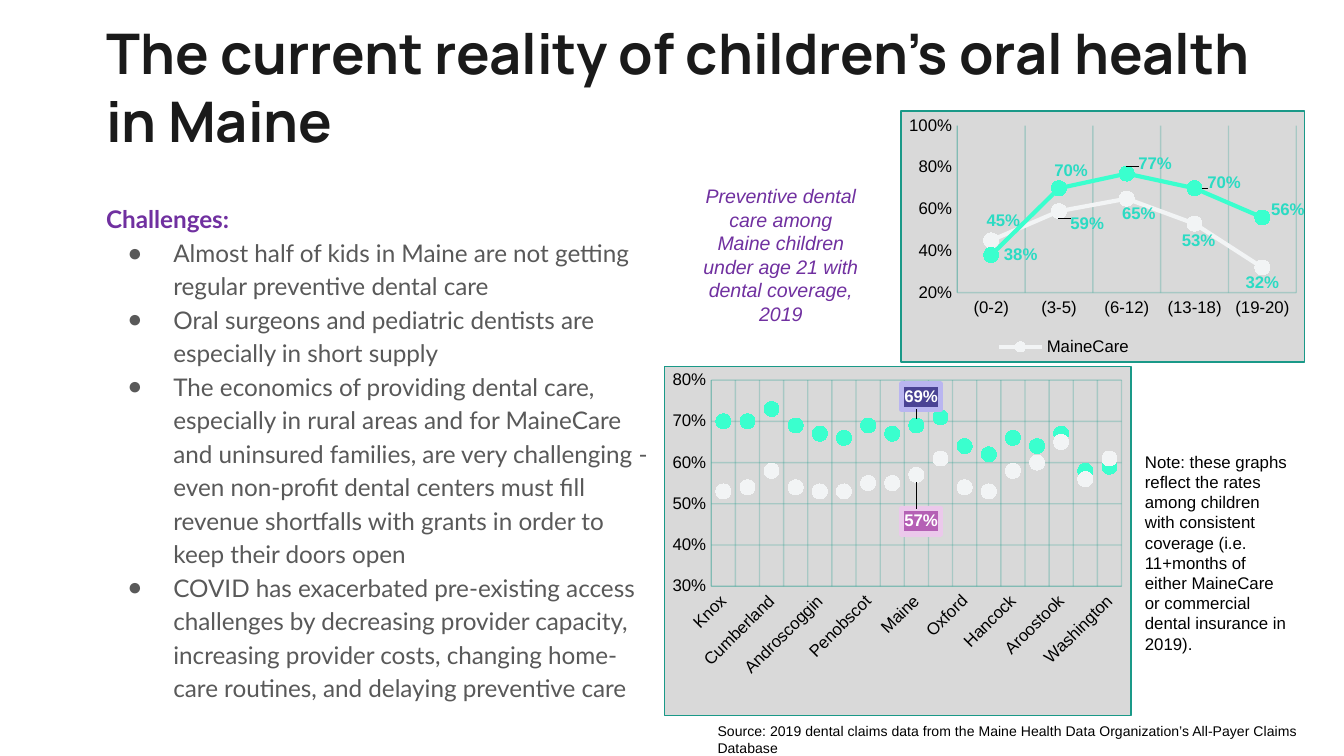
from lxml.etree import SubElement
from pptx import Presentation
from pptx.chart.data import CategoryChartData
from pptx.dml.color import RGBColor
from pptx.enum.chart import (XL_CHART_TYPE, XL_LABEL_POSITION, XL_LEGEND_POSITION,
                             XL_MARKER_STYLE, XL_TICK_MARK)
from pptx.enum.text import MSO_ANCHOR, MSO_AUTO_SIZE, PP_ALIGN
from pptx.oxml import parse_xml
from pptx.oxml.ns import nsdecls, qn
from pptx.util import Inches, Pt

COLORS = {
    "title": "1A1A1A", "purple": "7030A0", "body": "595959", "black": "000000",
    "teal": "1A9988", "panel": "D9D9D9", "label": "2BDBC3", "white": "FFFFFF",
    "MaineCare": "F2F4F5", "Commercial Dental": "3AFFCE",
    "indigo": "4A4394", "lavender": "B9B5F0", "orchid": "B560B5", "pink": "EBC8EB",
}
CELL = 0.1  # grid cell in inches

CHALLENGES = [
    "Almost half of kids in Maine are not getting regular preventive dental care",
    "Oral surgeons and pediatric dentists are especially in short supply",
    "The economics of providing dental care, especially in rural areas and for MaineCare "
    "and uninsured families, are very challenging - even non-profit dental centers must fill "
    "revenue shortfalls with grants in order to keep their doors open",
    "COVID has exacerbated pre-existing access challenges by decreasing provider capacity, "
    "increasing provider costs, changing home-care routines, and delaying preventive care",
]
AGES = ["(0-2)", "(3-5)", "(6-12)", "(13-18)", "(19-20)"]
AGE_RATES = {
    "MaineCare": [0.45, 0.59, 0.65, 0.53, 0.32],
    "Commercial Dental": [0.38, 0.70, 0.77, 0.70, 0.56],
}
ABOVE, BELOW, RIGHT = XL_LABEL_POSITION.ABOVE, XL_LABEL_POSITION.BELOW, XL_LABEL_POSITION.RIGHT
# Position and shift, as shares of the chart's width and height
AGE_LABELS = {
    "MaineCare": [(ABOVE, 0.03, 0.01), (BELOW, 0.07, -0.04), (BELOW, 0.03, -0.03),
                  (BELOW, 0.01, -0.02), (BELOW, 0, -0.03)],
    "Commercial Dental": [(RIGHT, 0, 0), (ABOVE, 0.03, 0.02), (ABOVE, 0.07, 0.05),
                          (RIGHT, 0, -0.02), (RIGHT, -0.01, -0.03)],
}
COUNTIES = ["Knox", "York", "Cumberland", "Sagadahoc", "Androscoggin", "Waldo", "Penobscot",
            "Franklin", "Maine", "Kennebec", "Oxford", "Lincoln", "Hancock", "Somerset",
            "Aroostook", "Piscataquis", "Washington"]
COUNTY_RATES = {
    "Commercial Dental": [0.70, 0.70, 0.73, 0.69, 0.67, 0.66, 0.69, 0.67, 0.69, 0.71, 0.64,
                          0.62, 0.66, 0.64, 0.67, 0.58, 0.59],
    "MaineCare": [0.53, 0.54, 0.58, 0.54, 0.53, 0.53, 0.55, 0.55, 0.57, 0.61, 0.54, 0.53,
                  0.58, 0.60, 0.65, 0.56, 0.61],
}
# Statewide callouts: position and shift, fill, border
STATE_CALLOUTS = {
    "Commercial Dental": ((ABOVE, 0.01, -0.01), "indigo", "lavender"),
    "MaineCare": ((BELOW, 0.01, 0.06), "orchid", "pink"),
}


def rgb(name):
    return RGBColor.from_string(COLORS[name])


def grid(column, row, columns, rows):
    return [Inches(cells * CELL) for cells in (column, row, columns, rows)]


def style_font(font, size, color="black", name="Arial", bold=False, italic=False):
    font.size, font.name, font.bold, font.italic = Pt(size), name, bold, italic
    font.color.rgb = rgb(color)


def write(para, text, align=PP_ALIGN.LEFT, spacing=1.0, **style):
    para.alignment, para.line_spacing = align, spacing
    para.space_before = para.space_after = Pt(0)
    span = para.add_run()
    span.text = text
    style_font(span.font, **style)


def set_bullet(para, character=None):
    properties = para._p.get_or_add_pPr()
    properties.set("marL", str(Inches(0.5) if character else 0))
    properties.set("indent", str(Inches(-0.34) if character else 0))
    if character:
        color = SubElement(SubElement(properties, qn("a:buClr")), qn("a:srgbClr"))
        color.set("val", COLORS["body"])
        SubElement(properties, qn("a:buChar")).set("char", character)
    else:
        SubElement(properties, qn("a:buNone"))


def place_placeholder(box, *cells):
    box.left, box.top, box.width, box.height = grid(*cells)
    frame = box.text_frame
    frame.word_wrap, frame.auto_size = True, MSO_AUTO_SIZE.NONE
    frame.vertical_anchor = MSO_ANCHOR.TOP
    frame.margin_left = frame.margin_right = Inches(0.1)
    frame.margin_top = frame.margin_bottom = Inches(0.1)
    return frame


def add_note(page, cells, text, **style):
    frame = page.shapes.add_textbox(*grid(*cells)).text_frame
    frame.word_wrap, frame.auto_size = True, MSO_AUTO_SIZE.SHAPE_TO_FIT_TEXT
    write(frame.paragraphs[0], text, **style)


def box_format(fill, border, points):
    return parse_xml(
        f'<c:spPr {nsdecls("c", "a")}><a:solidFill><a:srgbClr val="{COLORS[fill]}"/></a:solidFill>'
        f'<a:ln w="{Pt(points)}"><a:solidFill><a:srgbClr val="{COLORS[border]}"/></a:solidFill>'
        '</a:ln></c:spPr>')


def manual_layout(**settings):
    parts = "".join(f'<c:{key} val="{value}"/>' for key, value in settings.items())
    return parse_xml(f'<c:layout {nsdecls("c")}><c:manualLayout>{parts}'
                     '</c:manualLayout></c:layout>')


def style_line(line):
    line.width, line.color.rgb = Pt(0.75), rgb("teal")
    for color in line._ln.iter(qn("a:srgbClr")):
        SubElement(color, qn("a:alpha")).set("val", "25000")


def style_axis(axis):
    axis.major_tick_mark = axis.minor_tick_mark = XL_TICK_MARK.NONE
    style_font(axis.tick_labels.font, 9)
    style_line(axis.format.line)
    if axis.has_major_gridlines:
        style_line(axis.major_gridlines.format.line)


def add_rate_chart(page, cells, categories, rates, low, high, step, joined, rows):
    data = CategoryChartData(number_format="0%")
    data.categories = categories
    for name, values in rates.items():
        data.add_series(name, values)
    chart = page.shapes.add_chart(XL_CHART_TYPE.LINE_MARKERS, *grid(*cells), data).chart
    chart.has_title = chart.has_legend = False
    style_font(chart.font, 10, "teal")
    chart.element.find(qn("c:chart")).addnext(box_format("panel", "teal", 0.75))
    # Axes
    chart.category_axis.has_major_gridlines = True
    scale = chart.value_axis
    scale.has_major_gridlines = rows
    scale.minimum_scale, scale.maximum_scale, scale.major_unit = low, high, step
    scale.tick_labels.number_format = "0%"
    scale.tick_labels.number_format_is_linked = False
    for axis in (chart.category_axis, scale):
        style_axis(axis)
    # Series
    chart.plots[0].vary_by_categories = False
    for series in chart.plots[0].series:
        series.smooth = False
        marker = series.marker
        marker.style, marker.size = XL_MARKER_STYLE.CIRCLE, 8
        marker.format.fill.solid()
        marker.format.fill.fore_color.rgb = rgb(series.name)
        marker.format.line.color.rgb = rgb(series.name)
        if joined:
            series.format.line.width = Pt(2.25)
            series.format.line.color.rgb = rgb(series.name)
        else:
            series.format.line.fill.background()
    return chart


def label_point(series, index, placing, color):
    position, right, down = placing
    label = series.points[index].data_label
    style_font(label.font, 9, color, bold=True)
    label.position = position
    node = series._element.findall(".//" + qn("c:dLbl"))[-1]
    if right or down:
        node.find(qn("c:idx")).addnext(manual_layout(x=right, y=down))
    return node


def add_age_chart(page):
    chart = add_rate_chart(page, (67, 8.2, 30.1, 18.8), AGES, AGE_RATES,
                           0.2, 1, 0.2, joined=True, rows=False)
    for series in chart.plots[0].series:
        for index, placing in enumerate(AGE_LABELS[series.name]):
            label_point(series, index, placing, "label")
    # Legend names MaineCare only
    chart.has_legend = True
    legend = chart.legend
    legend.position, legend.include_in_layout = XL_LEGEND_POSITION.BOTTOM, False
    style_font(legend.font, 9)
    entry = parse_xml(
        f'<c:legendEntry {nsdecls("c")}><c:idx val="1"/><c:delete val="1"/></c:legendEntry>')
    node = chart.element.find(".//" + qn("c:legend"))
    for layout in node.findall(qn("c:layout")):
        node.remove(layout)
    node.find(qn("c:legendPos")).addnext(entry)
    entry.addnext(manual_layout(xMode="edge", yMode="edge", x=0.23, y=0.88))


def add_county_chart(page):
    chart = add_rate_chart(page, (49.4, 27.2, 34.8, 26.1), COUNTIES, COUNTY_RATES,
                           0.3, 0.8, 0.1, joined=False, rows=True)
    plot_area = chart.element.find(".//" + qn("c:plotArea"))
    for layout in plot_area.findall(qn("c:layout")):
        plot_area.remove(layout)
    plot_area.insert(0, manual_layout(layoutTarget="inner", xMode="edge", yMode="edge",
                                      x=0.1, y=0.04, w=0.88, h=0.59))
    # Slanted names, every second one shown
    names = plot_area.find(qn("c:catAx"))
    names.find(".//" + qn("a:bodyPr")).set("rot", "-2700000")
    names.find(qn("c:lblOffset")).addnext(
        parse_xml(f'<c:tickLblSkip {nsdecls("c")} val="2"/>'))
    # Callouts for the statewide rates
    for series in chart.plots[0].series:
        placing, fill, border = STATE_CALLOUTS[series.name]
        series.data_labels.show_value = False
        label = label_point(series, COUNTIES.index("Maine"), placing, "white")
        label.find(qn("c:txPr")).addprevious(box_format(fill, border, 3))


def main():
    deck = Presentation()
    deck.slide_width = Inches(10)
    deck.slide_height = deck.slide_width * 9 // 16
    page = deck.slides.add_slide(deck.slide_layouts[1])
    # Title and challenges
    title = place_placeholder(page.shapes.title, 6.9, 0.4, 88.6, 12.5)
    write(title.paragraphs[0], "The current reality of children’s oral health in Maine",
          size=30, color="title", name="Manrope", bold=True)
    body = place_placeholder(page.placeholders[1], 6.9, 13.9, 42.5, 39.4)
    write(body.paragraphs[0], "Challenges:", spacing=1.15,
          size=13, color="purple", name="Lato", bold=True)
    set_bullet(body.paragraphs[0])
    for challenge in CHALLENGES:
        para = body.add_paragraph()
        write(para, challenge, spacing=1.15, size=13, color="body", name="Lato")
        set_bullet(para, "●")
    # Charts
    add_age_chart(page)
    add_county_chart(page)
    # Caption, source and note
    add_note(page, (51.2, 13.2, 13.8, 11.6),
             "Preventive dental care among Maine children under age 21 with dental coverage, 2019",
             align=PP_ALIGN.CENTER, size=10.5, color="purple", italic=True)
    add_note(page, (52.4, 53.3, 46.8, 3.5),
             "Source: 2019 dental claims data from the Maine Health Data Organization’s "
             "All-Payer Claims Database", size=7.5)
    add_note(page, (84.2, 33.1, 12.9, 16.2),
             "Note: these graphs reflect the rates among children with consistent coverage (i.e. "
             "11+months of either MaineCare or commercial dental insurance in 2019).", size=9)
    deck.save("out.pptx")


if __name__ == "__main__":
    main()
